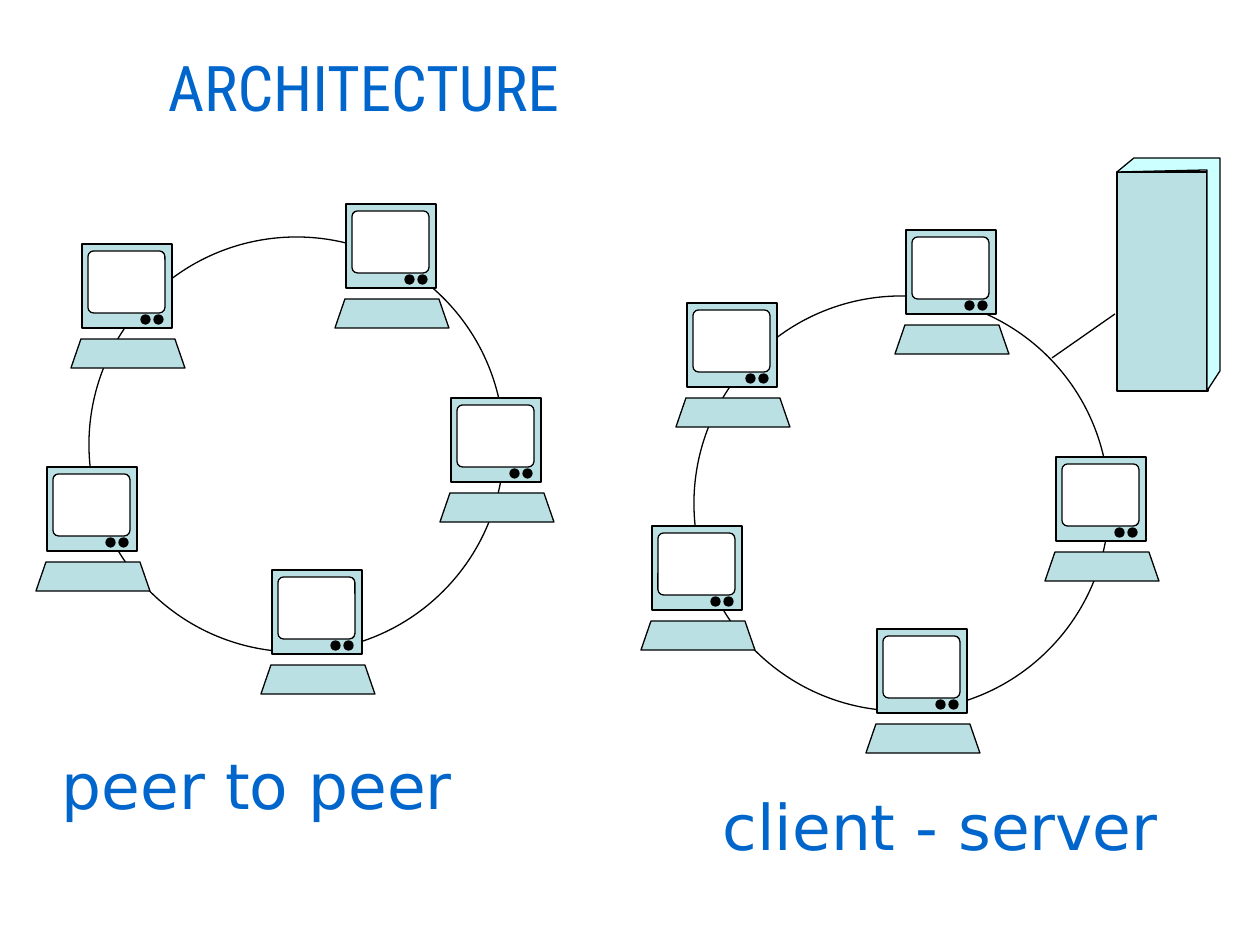
from lxml import etree
from pptx import Presentation
from pptx.dml.color import RGBColor
from pptx.enum.shapes import MSO_CONNECTOR, MSO_SHAPE
from pptx.enum.text import MSO_ANCHOR, MSO_AUTO_SIZE, PP_ALIGN
from pptx.oxml.ns import qn
from pptx.util import Pt

RECT, ROUND, OVAL = MSO_SHAPE.RECTANGLE, MSO_SHAPE.ROUNDED_RECTANGLE, MSO_SHAPE.OVAL
STRAIGHT = MSO_CONNECTOR.STRAIGHT
TOP, CENTER, NO_FIT = MSO_ANCHOR.TOP, PP_ALIGN.CENTER, MSO_AUTO_SIZE.NONE
SCALE = 914400 / 126  # EMU per px
TITLE_ONLY = 5

BLACK, WHITE, BLUE = "000000", "FFFFFF", "0066CC"
TEAL, PALE = "BBE0E3", "CCFFFF"

RING_SIZE = 415
SHARED_CLIENTS = [(-18, 7), (-53, 230), (172, 333), (351, 161)]


def px(*values):
    return [round(v * SCALE) for v in values]


def rgb(color):
    return RGBColor.from_string(color)


def style(sp, fill, width=0.75):
    sp.shadow.inherit = False
    if fill:
        sp.fill.solid()
        sp.fill.fore_color.rgb = rgb(fill)
    else:
        sp.fill.background()
    sp.line.color.rgb = rgb(BLACK)
    sp.line.width = Pt(width)


def add_preset(shapes, kind, x, y, w, h, fill, width=0.75):
    sp = shapes.add_shape(kind, *px(x, y, w, h))
    style(sp, fill, width)
    return sp


def add_polygon(shapes, x, y, points, fill):
    """Draw a closed outline from points relative to (x, y)."""
    corners = [px(x + dx, y + dy) for dx, dy in points]
    builder = shapes.build_freeform(*corners[0], scale=1.0)
    builder.add_line_segments(corners[1:], close=True)
    style(builder.convert_to_shape(), fill)


def add_line(shapes, x1, y1, x2, y2):
    line = shapes.add_connector(STRAIGHT, *px(x1, y1, x2, y2))
    line.line.color.rgb = rgb(BLACK)
    line.line.width = Pt(0.75)
    etree.SubElement(line._element.spPr, qn("a:effectLst"))


def set_text(sp, text, font):
    tf = sp.text_frame
    tf.text = text
    tf.word_wrap = False
    tf.auto_size = NO_FIT
    tf.vertical_anchor = TOP
    tf.margin_top, tf.margin_bottom = px(11, 0)
    p = tf.paragraphs[0]
    p.alignment = CENTER
    p.font.name = font
    p.font.size = Pt(36)
    p.font.color.rgb = rgb(BLUE)


def add_title(s, x, y, w, h, text):
    title = s.shapes.title
    title.left, title.top, title.width, title.height = px(x, y, w, h)
    set_text(title, text, "Roboto Condensed")


def add_caption(s, x, y, w, h, text):
    set_text(s.shapes.add_textbox(*px(x, y, w, h)), text, "DejaVu Sans")


def add_computer(s, x, y):
    shapes = s.shapes.add_group_shape().shapes
    add_preset(shapes, RECT, x + 11, y, 90, 84, TEAL, 1)
    screen = add_preset(shapes, ROUND, x + 17, y + 7, 77, 62, WHITE)
    screen.adjustments[0] = 0.09
    for dx in (70, 83):
        add_preset(shapes, OVAL, x + dx, y + 71, 9, 9, BLACK)
    keyboard = [(0, 29), (10, 0), (104, 0), (114, 29)]
    add_polygon(shapes, x, y + 95, keyboard, TEAL)


def add_network(s, x, y, top_client):
    """Draw a ring in the box at (x, y) with its computers around it."""
    add_preset(s.shapes, OVAL, x, y, RING_SIZE, RING_SIZE, None)
    for dx, dy in SHARED_CLIENTS + [top_client]:
        add_computer(s, x + dx, y + dy)


def add_server(s, x, y):
    add_preset(s.shapes, RECT, x, y + 14, 91, 219, TEAL)
    side = [(0, 14), (17, 0), (103, 0), (103, 213), (90, 233), (90, 12)]
    add_polygon(s.shapes, x, y, side, PALE)
    add_line(s.shapes, x - 2, y + 156, x - 65, y + 200)


def main():
    prs = Presentation()
    prs.slide_width, prs.slide_height = px(1260, 945)
    s = prs.slides.add_slide(prs.slide_layouts[TITLE_ONLY])
    add_title(s, 54, 37, 619, 122, "ARCHITECTURE")
    add_server(s, 1117, 158)
    add_caption(s, 110, 735, 294, 58, "peer to peer")
    add_caption(s, 795, 777, 291, 52, "client - server")
    add_network(s, 89, 237, top_client=(246, -33))
    add_network(s, 694, 296, top_client=(201, -66))
    prs.save("out.pptx")


if __name__ == "__main__":
    main()
